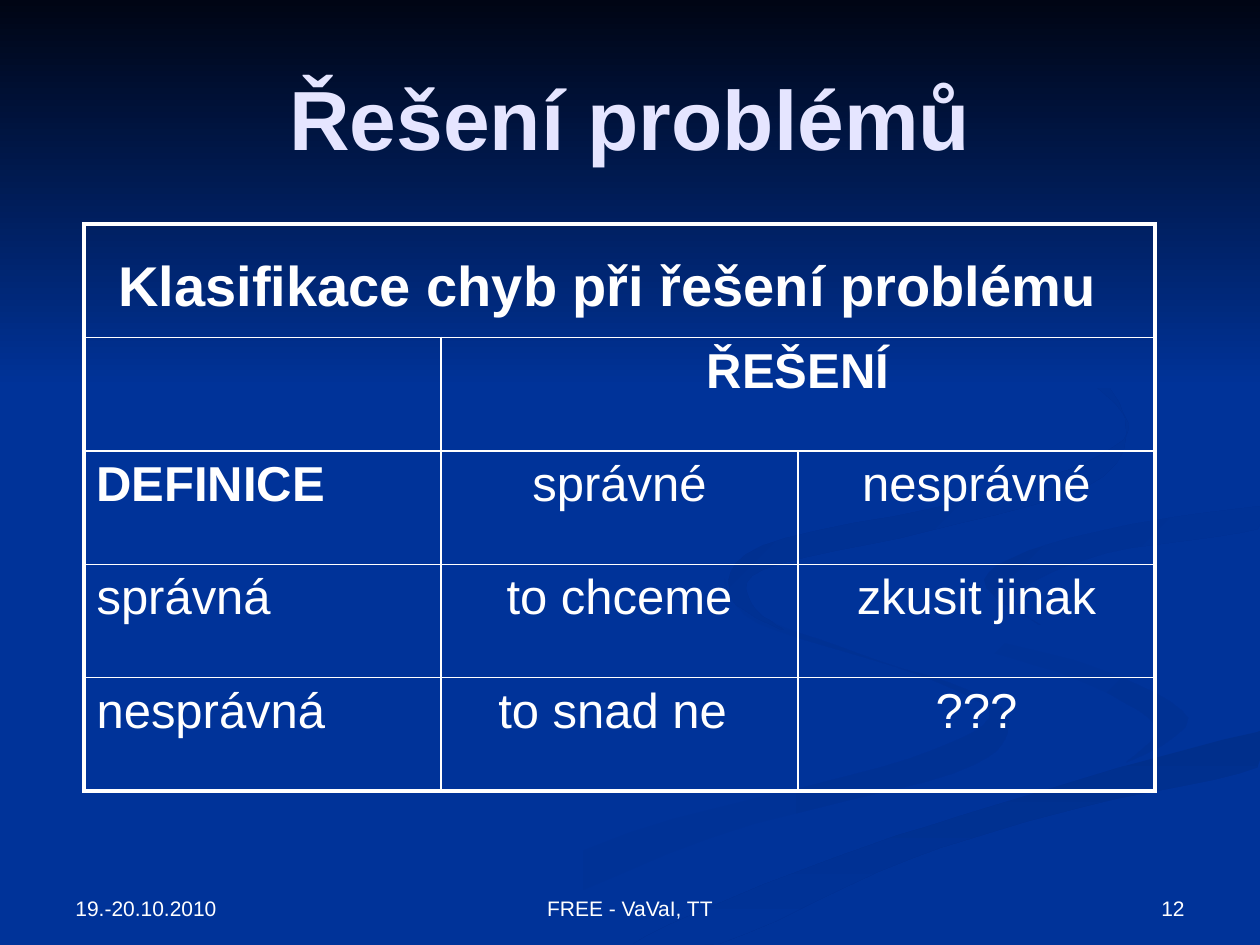
from lxml.etree import SubElement
from pptx import Presentation
from pptx.dml.color import RGBColor
from pptx.enum.text import MSO_ANCHOR, PP_ALIGN
from pptx.oxml.ns import qn
from pptx.util import Pt

COLORS = {
    "blue": "003399", "night": "000514", "title": "E5E5FF", "white": "FFFFFF",
    "shade1": "003193", "shade2": "002F8C", "shade3": "003091", "shade4": "002F8E",
}
LEFT, CENTER, RIGHT = PP_ALIGN.LEFT, PP_ALIGN.CENTER, PP_ALIGN.RIGHT
UNIT = Pt(0.72)  # grid step of the ribbon outlines
GRID_WIDTH, GRID_HEIGHT = 1000, 750

# Ribbons: start colour, end colour, clockwise angle, points of a smooth outline
RIBBONS = [
    ("blue", "shade1", 0, [
        (575, 459), (594, 485), (682, 519), (781, 553), (800, 581), (756, 614), (564, 665),
        (361, 749), (300, 749), (499, 661), (699, 609), (785, 570), (728, 535), (602, 495)]),
    ("blue", "shade1", 45, [
        (724, 464), (758, 498), (870, 530), (943, 570),
        (894, 605), (917, 576), (854, 539), (755, 505)]),
    ("shade2", "blue", 90, [
        (503, 749), (571, 749), (722, 682), (861, 640),
        (998, 609), (998, 581), (764, 647), (630, 693)]),
    ("shade3", "blue", 45, [
        (781, 460), (826, 496), (805, 472), (878, 439), (998, 420), (998, 402), (849, 427)]),
    ("shade4", "blue", 45, [
        (622, 500), (580, 474), (605, 433), (763, 398), (876, 360), (885, 320),
        (762, 233), (880, 307), (876, 378), (739, 421), (606, 452), (597, 480)]),
]

# Table rows: each cell is text, bold, alignment
ROWS = [
    [("Klasifikace chyb při řešení problému", True, CENTER)],
    [("", False, LEFT), ("ŘEŠENÍ", True, CENTER)],
    [("DEFINICE", True, LEFT), ("správné", False, CENTER), ("nesprávné", False, CENTER)],
    [("správná", False, LEFT), ("to chceme", False, CENTER), ("zkusit jinak", False, CENTER)],
    [("nesprávná", False, LEFT), ("to snad ne ", False, CENTER), ("???", False, CENTER)],
]


def rgb(name):
    return RGBColor.from_string(COLORS[name])


def smooth(points, steps=6):
    """Run a closed Catmull-Rom curve through the points, kept on the slide."""
    curve = []
    count = len(points)
    for index in range(count):
        corners = [points[(index + offset) % count] for offset in (-1, 0, 1, 2)]
        for step in range(steps):
            t = step / steps
            x, y = (
                b + t * (c - a + t * (2 * a - 5 * b + 4 * c - d
                                      + t * (3 * b - a - 3 * c + d))) / 2
                for a, b, c, d in zip(*corners)
            )
            curve.append((min(x, GRID_WIDTH), min(y, GRID_HEIGHT)))
    return curve


class SlideBuilder:
    font_name = "Arial"

    def __init__(self, slide):
        self.slide = slide

    def background(self, color):
        fill = self.slide.background.fill
        fill.solid()
        fill.fore_color.rgb = rgb(color)

    def outline(self, start, end, angle, points):
        builder = self.slide.shapes.build_freeform(*points[0], scale=UNIT)
        builder.add_line_segments(points[1:], close=True)
        shape = builder.convert_to_shape()
        shape.shadow.inherit = False
        shape.line.fill.background()
        shape.fill.gradient()
        shape.fill.gradient_angle = (360 - angle) % 360
        for stop, color, position in zip(shape.fill.gradient_stops, (start, end), (0, 1)):
            stop.color.rgb = rgb(color)
            stop.position = position

    def style_run(self, run, size, color="white", bold=False):
        font = run.font
        font.name, font.size, font.bold = self.font_name, Pt(size), bold
        font.color.rgb = rgb(color)

    def text(self, text, box, size, align, anchor, color="white", bold=False):
        shape = self.slide.shapes.add_textbox(*map(Pt, box))
        text_frame = shape.text_frame
        text_frame.word_wrap = True
        text_frame.vertical_anchor = anchor
        text_frame.text = text
        paragraph = text_frame.paragraphs[0]
        paragraph.alignment = align
        self.style_run(paragraph.runs[0], size, color, bold)

    def cell_borders(self, cell, widths):
        properties = cell._tc.get_or_add_tcPr()
        for side, width in zip("LRTB", widths):
            line = SubElement(properties, qn(f"a:ln{side}"), w=str(Pt(width)))
            fill = SubElement(line, qn("a:solidFill"))
            SubElement(fill, qn("a:srgbClr"), val=COLORS["white"])

    def table(self, rows, box, outer=2.25, inner=1):
        row_count, column_count = len(rows), max(map(len, rows))
        frame = self.slide.shapes.add_table(row_count, column_count, *map(Pt, box))
        table = frame.table
        table.first_row = table.horz_banding = False
        for row, contents in enumerate(rows):
            # The last cell of a short row spans the rest of it
            last = len(contents) - 1
            if last < column_count - 1:
                table.cell(row, last).merge(table.cell(row, column_count - 1))
            for column, (text, bold, align) in enumerate(contents):
                cell = table.cell(row, column)
                edges = (column == 0, column == last, row == 0, row == row_count - 1)
                self.cell_borders(cell, [outer if edge else inner for edge in edges])
                cell.fill.background()
                cell.text_frame.text = text
                paragraph = cell.text_frame.paragraphs[0]
                paragraph.alignment = align
                for run in paragraph.runs:
                    self.style_run(run, 32 if row == 0 else 28, bold=bold)
        # The heading ends in a larger space that sets its line height
        space = table.cell(0, 0).text_frame.paragraphs[0].add_run()
        space.text = " "
        self.style_run(space, 48)


def main():
    presentation = Presentation()
    presentation.slide_width, presentation.slide_height = Pt(720), Pt(540)
    builder = SlideBuilder(presentation.slides.add_slide(presentation.slide_layouts[6]))

    # Background with ribbons and dark sky
    builder.background("blue")
    for start, end, angle, points in RIBBONS:
        builder.outline(start, end, angle, smooth(points))
    sky = [(0, 0), (0, 308), (GRID_WIDTH, 308), (GRID_WIDTH, 0)]
    builder.outline("night", "blue", 90, sky)

    # Title and table
    builder.text("Řešení problémů", (36, 21.6, 648, 90), 48, CENTER,
                 MSO_ANCHOR.MIDDLE, "title", True)
    builder.table(ROWS, (48, 128, 612, 324))

    # Footer
    for text, left, width, align in [
        ("19.-20.10.2010", 36, 168, LEFT),
        ("FREE - VaVaI, TT", 246, 228, CENTER),
        ("12", 516, 168, RIGHT),
    ]:
        builder.text(text, (left, 492, width, 37.5), 12, align, MSO_ANCHOR.BOTTOM)

    presentation.save("out.pptx")


if __name__ == "__main__":
    main()
